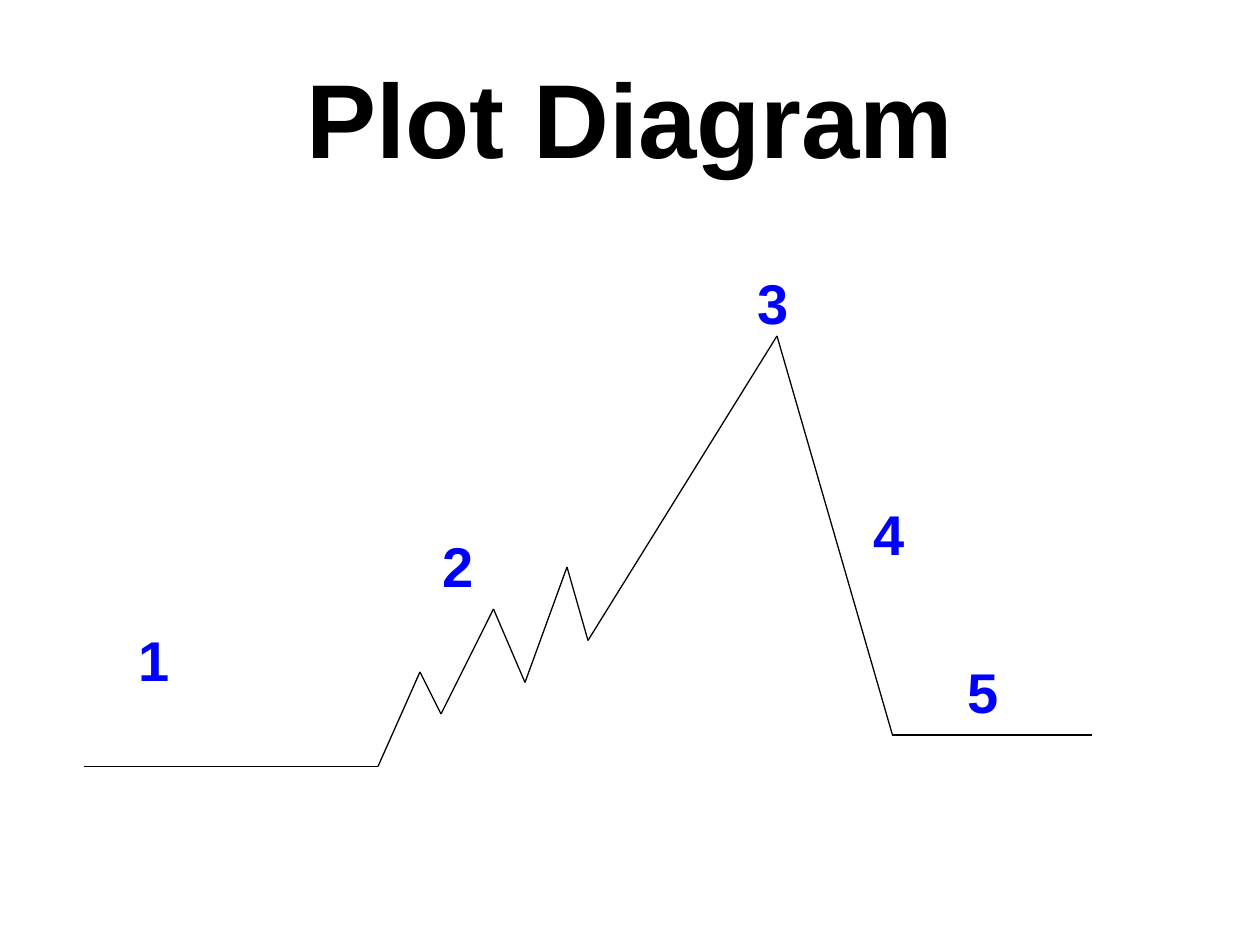
"""Build a slide with a numbered plot diagram."""
from itertools import pairwise
from typing import NamedTuple

from lxml.etree import SubElement
from pptx import Presentation
from pptx.dml.color import RGBColor
from pptx.enum.shapes import MSO_CONNECTOR as Connector
from pptx.enum.text import MSO_ANCHOR as Anchor, MSO_AUTO_SIZE as AutoSize, PP_ALIGN as Align
from pptx.oxml.ns import qn
from pptx.util import Pt

COLORS = {"ink": "000000", "label": "0000FF", "background": "FFFFFF"}
FONT = "Arial"
LABEL_HEIGHT = 45


class Point(NamedTuple):
    x: float
    y: float


class Label(NamedTuple):
    text: str
    left: float
    top: float
    width: float


PEAK = Point(444, 192)
FOOT = Point(510, 420)
RISE = [
    Point(48, 438), Point(216, 438), Point(240, 384), Point(252, 408), Point(282, 348),
    Point(300, 390), Point(324, 324), Point(336, 366), PEAK,
]
RESOLUTION = [FOOT, Point(624, FOOT.y)]
LABELS = [
    Label("2", 246, 300, 48),
    Label("1", 72, 354, 60),
    Label("3", 426, 150, 36),
    Label("4", 492, 282, 36),
    Label("5", 546, 372, 42),
]


def color(name: str) -> RGBColor:
    return RGBColor.from_string(COLORS[name])


def add_bold_run(paragraph, text: str, size: float, color_name: str) -> None:
    run = paragraph.add_run()
    run.text = text
    run.font.name = FONT
    run.font.size = Pt(size)
    run.font.bold = True
    run.font.color.rgb = color(color_name)


def set_title(slide, text: str) -> None:
    title = slide.shapes.title
    title.left, title.top, title.width, title.height = Pt(36), Pt(21.6), Pt(648), Pt(90)
    frame = title.text_frame
    frame.vertical_anchor = Anchor.MIDDLE
    frame.auto_size = AutoSize.NONE
    paragraph = frame.paragraphs[0]
    paragraph.alignment = Align.CENTER
    add_bold_run(paragraph, text, 60, "ink")


def add_path(shapes, points: list[Point]) -> None:
    for start, end in pairwise(points):
        line = shapes.add_connector(
            Connector.STRAIGHT, Pt(start.x), Pt(start.y), Pt(end.x), Pt(end.y)
        )
        line.line.color.rgb = color("ink")
        line.line.width = Pt(0.75)
        SubElement(line._element.spPr, qn("a:effectLst"))


def add_label(slide, label: Label) -> None:
    box = slide.shapes.add_textbox(
        Pt(label.left), Pt(label.top), Pt(label.width), Pt(LABEL_HEIGHT)
    )
    box.text_frame.word_wrap = True
    add_bold_run(box.text_frame.paragraphs[0], label.text, 32, "label")


def main() -> None:
    presentation = Presentation()
    presentation.slide_width, presentation.slide_height = Pt(720), Pt(540)
    slide = presentation.slides.add_slide(presentation.slide_layouts[5])
    slide.background.fill.solid()
    slide.background.fill.fore_color.rgb = color("background")
    set_title(slide, "Plot Diagram")
    add_path(slide.shapes, [PEAK, FOOT])
    group = slide.shapes.add_group_shape()
    for points in (RISE, RESOLUTION):
        add_path(group.shapes, points)
    for label in LABELS:
        add_label(slide, label)
    presentation.save("out.pptx")


if __name__ == "__main__":
    main()
